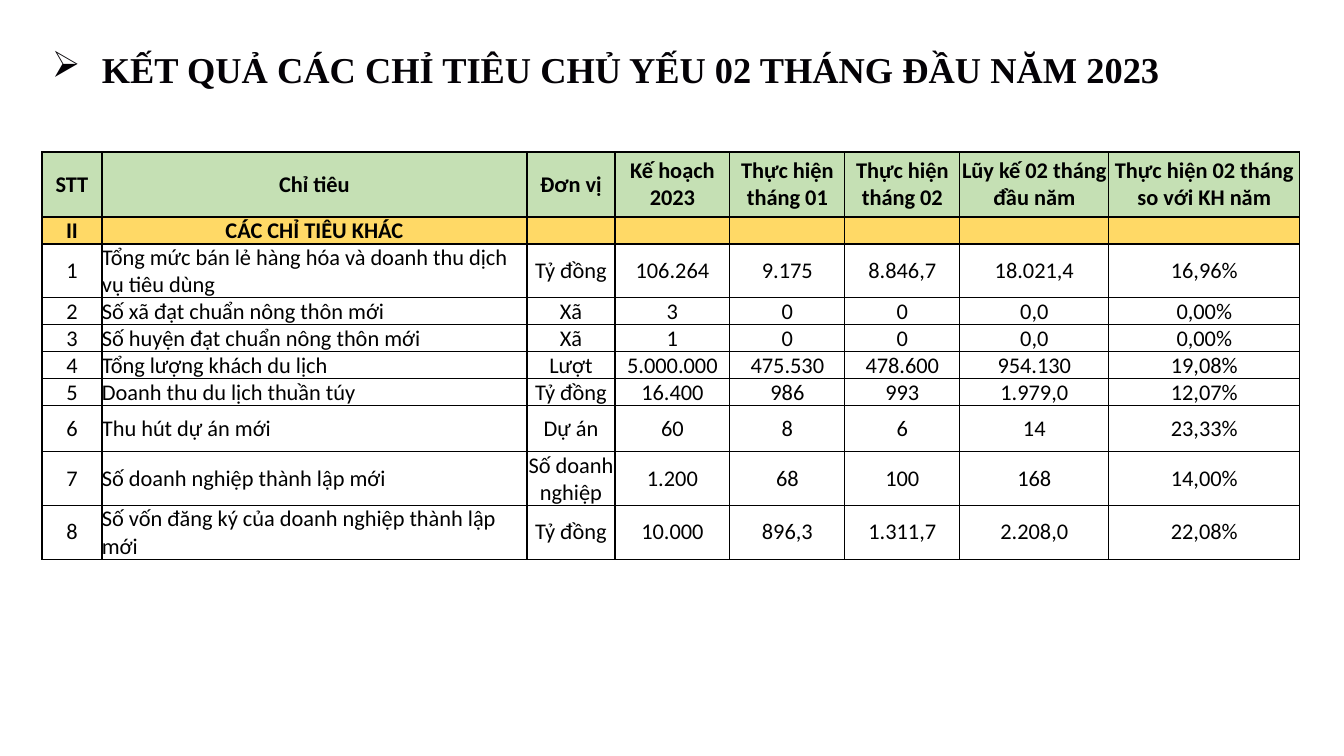
import pptx
import pptx.dml.color
import pptx.enum.text
import pptx.oxml.ns
import pptx.util
from lxml import etree

SLIDE_WIDTH, SLIDE_HEIGHT = 1344, 756
EMU_PER_PX = 12192000 / SLIDE_WIDTH
ALIGN = pptx.enum.text.PP_ALIGN

HEADINGS = ["STT", "Chỉ tiêu", "Đơn vị", "Kế hoạch 2023", "Thực hiện tháng 01",
            "Thực hiện tháng 02", "Lũy kế 02 tháng đầu năm",
            "Thực hiện 02 tháng so với KH năm"]
SECTION = ["II", "CÁC CHỈ TIÊU KHÁC"] + [""] * 6
INDICATORS = [
    ["1", "Tổng mức bán lẻ hàng hóa và doanh thu dịch vụ tiêu dùng", "Tỷ đồng",
     "106.264", "9.175", "8.846,7", "18.021,4", "16,96%"],
    ["2", "Số xã đạt chuẩn nông thôn mới", "Xã", "3", "0", "0", "0,0", "0,00%"],
    ["3", "Số huyện đạt chuẩn nông thôn mới", "Xã", "1", "0", "0", "0,0", "0,00%"],
    ["4", "Tổng lượng khách du lịch", "Lượt",
     "5.000.000", "475.530", "478.600", "954.130", "19,08%"],
    ["5", "Doanh thu du lịch thuần túy", "Tỷ đồng",
     "16.400", "986", "993", "1.979,0", "12,07%"],
    ["6", "Thu hút dự án mới", "Dự án", "60", "8", "6", "14", "23,33%"],
    ["7", "Số doanh nghiệp thành lập mới", "Số doanh nghiệp",
     "1.200", "68", "100", "168", "14,00%"],
    ["8", "Số vốn đăng ký của doanh nghiệp thành lập mới", "Tỷ đồng",
     "10.000", "896,3", "1.311,7", "2.208,0", "22,08%"],
]
COLUMN_WIDTHS = [60, 425, 88, 115, 115, 115, 149, 191]
ROW_HEIGHTS = [65, 27, 53, 27, 27, 27, 27, 46, 53, 53]


def px(length):
    return pptx.util.Emu(round(length * EMU_PER_PX))


def color(value):
    return pptx.dml.color.RGBColor.from_string(value)


def add_element(parent, tag, **attributes):
    return etree.SubElement(parent, pptx.oxml.ns.qn(tag), **attributes)


class ReportSlide:
    title_font, title_size, title_color = "Times New Roman", 26, "040206"
    table_font, table_size, table_color = "Calibri", 16, "000000"
    heading_fill, section_fill = "C5E0B4", "FFD966"

    def __init__(self, deck):
        self.slide = deck.slides.add_slide(deck.slide_layouts[6])

    def add_run(self, para, text, font, size, ink, bold):
        span = para.add_run()
        span.text = text
        span.font.name = font
        span.font.size = pptx.util.Pt(size)
        span.font.bold = bold
        span.font.color.rgb = color(ink)

    def add_title(self, text, left, top, width, height, indent):
        box = self.slide.shapes.add_textbox(px(left), px(top), px(width), px(height))
        frame = box.text_frame
        frame.word_wrap = True
        frame.auto_size = pptx.enum.text.MSO_AUTO_SIZE.SHAPE_TO_FIT_TEXT
        para = frame.paragraphs[0]
        properties = para._p.get_or_add_pPr()
        properties.set("marL", str(px(indent)))
        properties.set("indent", str(-px(indent)))
        add_element(properties, "a:buChar", char="➢")
        self.add_run(para, text, self.title_font, self.title_size, self.title_color, True)

    def add_borders(self, cell):
        properties = cell._tc.get_or_add_tcPr()
        for side in ("a:lnL", "a:lnR", "a:lnT", "a:lnB"):
            line = add_element(properties, side, w=str(pptx.util.Pt(1)))
            add_element(add_element(line, "a:solidFill"), "a:srgbClr", val="000000")

    def fill_cell(self, cell, text, align, bold, fill):
        cell.margin_left = cell.margin_right = cell.margin_top = cell.margin_bottom = 0
        cell.vertical_anchor = pptx.enum.text.MSO_ANCHOR.MIDDLE
        self.add_borders(cell)
        if fill:
            cell.fill.solid()
            cell.fill.fore_color.rgb = color(fill)
        else:
            cell.fill.background()
        para = cell.text_frame.paragraphs[0]
        para.alignment = align
        if text:
            self.add_run(para, text, self.table_font, self.table_size,
                         self.table_color, bold)
        else:
            # Keeps an empty cell from stretching its row
            add_element(para._p, "a:endParaRPr", sz=str(self.table_size * 100))

    def add_table(self, rows, left, top):
        frame = self.slide.shapes.add_table(
            len(rows), len(COLUMN_WIDTHS), px(left), px(top),
            px(sum(COLUMN_WIDTHS)), px(sum(ROW_HEIGHTS)))
        table = frame.table
        table.first_row = table.horz_banding = False
        for column, width in zip(table.columns, COLUMN_WIDTHS):
            column.width = px(width)
        for row, height in zip(table.rows, ROW_HEIGHTS):
            row.height = px(height)
        fills = [self.heading_fill, self.section_fill]
        for r, texts in enumerate(rows):
            is_header = r < len(fills)
            for c, text in enumerate(texts):
                align = ALIGN.LEFT if c == 1 and not is_header else ALIGN.CENTER
                self.fill_cell(table.cell(r, c), text, align, is_header,
                               fills[r] if is_header else None)


def main():
    deck = pptx.Presentation()
    deck.slide_width, deck.slide_height = px(SLIDE_WIDTH), px(SLIDE_HEIGHT)
    page = ReportSlide(deck)

    # Title
    page.add_title("KẾT QUẢ CÁC CHỈ TIÊU CHỦ YẾU 02 THÁNG ĐẦU NĂM 2023",
                   42, 42, 1288, 54, 50)

    # Indicator table
    page.add_table([HEADINGS, SECTION] + INDICATORS, 42, 152)

    deck.save("out.pptx")


if __name__ == "__main__":
    main()
